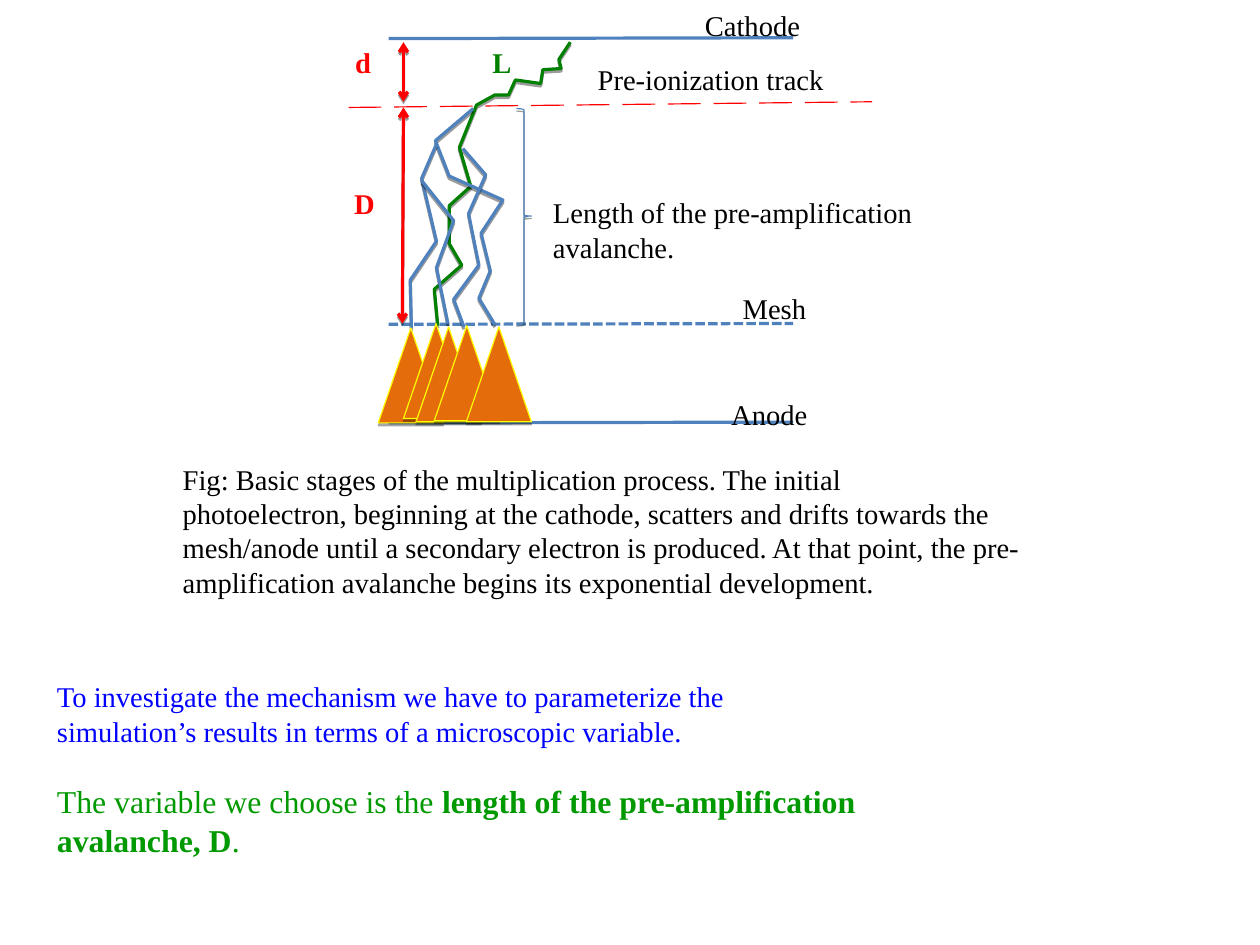
import dataclasses

import lxml.etree
import pptx
import pptx.dml.color
import pptx.enum.dml
import pptx.enum.shapes
import pptx.oxml.ns
import pptx.util

Pt = pptx.util.Pt
qn = pptx.oxml.ns.qn
Kind = pptx.enum.shapes.MSO_SHAPE
Join = pptx.enum.shapes.MSO_CONNECTOR
Dash = pptx.enum.dml.MSO_LINE


@dataclasses.dataclass(frozen=True)
class Theme:
    font: str = "Times New Roman"
    ink: str = "000000"
    blue: str = "4F81BD"
    green: str = "008000"
    red: str = "FF0000"
    cone: str = "E46C0A"
    rim: str = "FFFF00"
    aim: str = "0000FF"
    choice: str = "009900"
    text: float = 18
    large: float = 20
    thin: float = 0.75
    thick: float = 2


theme = Theme()
hue = pptx.dml.color.RGBColor.from_string


def trace(shape, color, width, drop=0, alpha=38):
    shape.line.color.rgb = hue(color)
    shape.line.width = Pt(width)
    props = shape._element.spPr
    effect = lxml.etree.SubElement(props, qn("a:effectLst"))
    if drop:
        shade = lxml.etree.SubElement(effect, qn("a:outerShdw"), blurRad="0",
                                      dist=str(Pt(drop)), dir="5400000", rotWithShape="0")
        tone = lxml.etree.SubElement(shade, qn("a:srgbClr"), val=theme.ink)
        lxml.etree.SubElement(tone, qn("a:alpha"), val=str(alpha * 1000))
    return props.find(qn("a:ln"))


def write(left, top, width, height, paras):
    box = shapes.add_textbox(Pt(left), Pt(top), Pt(width), Pt(height))
    frame = box.text_frame
    frame.word_wrap = True
    for index, runs in enumerate(paras):
        para = frame.add_paragraph() if index else frame.paragraphs[0]
        for words, color, size, bold in runs:
            run = para.add_run()
            run.text = words
            run.font.name = theme.font
            run.font.size = Pt(size)
            run.font.bold = bold
            run.font.color.rgb = hue(color)
    return frame


deck = pptx.Presentation()
deck.slide_width = Pt(793.75)
deck.slide_height = Pt(595.25)
shapes = deck.slides.add_slide(deck.slide_layouts[6]).shapes

for top in (24.3, 204.3, 266.4):
    plate = shapes.add_connector(Join.STRAIGHT, Pt(244.8), Pt(top), Pt(499.7), Pt(top - 0.5))
    trace(plate, theme.blue, theme.thick)
    if top == 204.3:
        plate.line.dash_style = Dash.SQUARE_DOT

level = shapes.add_connector(Join.STRAIGHT, Pt(219.6), Pt(67.7), Pt(549.4), Pt(64.1))
stroke = trace(level, theme.red, theme.thin)
dashes = lxml.etree.SubElement(stroke, qn("a:custDash"))
lxml.etree.SubElement(dashes, qn("a:ds"), d="2800000", sp="1100000")

tracks = [
    (theme.green, [(359.3, 26.6), (352.1, 37.4), (353.5, 43.2), (342, 43.9), (340.6, 52.6),
                   (324.7, 50.4), (320.4, 59.8), (311.8, 59.8), (300.2, 66.2), (298.1, 71.3),
                   (289.4, 92.9), (296.6, 117.4), (283, 129.6), (283, 153.4), (290.9, 167),
                   (273.6, 182.2), (275.8, 205.2)]),
    (theme.blue, [(298.1, 68.4), (274.3, 88.6), (283, 110.9), (316.8, 126), (303.1, 146.9),
                  (308.9, 170.6), (301.7, 187.9), (311.8, 204.5)]),
    (theme.blue, [(291.6, 93.6), (306, 110.2), (295.2, 134.6), (301.7, 167), (285.8, 188.6),
                  (292.3, 205.9)]),
    (theme.blue, [(275, 90.7), (265.7, 112.3), (275, 151.9), (258.5, 176.4), (259.2, 206.6)]),
    (theme.blue, [(265.7, 113.8), (285.8, 139), (275, 168.5), (282.2, 203.8)]),
]
for color, points in tracks:
    spots = [(Pt(x), Pt(y)) for x, y in points]
    pen = shapes.build_freeform(*spots[0])
    pen.add_line_segments(spots[1:], close=False)
    track = pen.convert_to_shape()
    track.fill.background()
    trace(track, color, theme.thick, 1.6)

for left, top in [(238.3, 206.6), (254.2, 203.8), (262.1, 205.9), (273.6, 205.2), (293.8, 205.9)]:
    cone = shapes.add_shape(Kind.ISOSCELES_TRIANGLE, Pt(left), Pt(top), Pt(41), Pt(59.8))
    cone.fill.solid()
    cone.fill.fore_color.rgb = hue(theme.cone)
    trace(cone, theme.rim, theme.thin, 1.8, 35)

for top, foot, end in [(26.6, 254.2, 64.1), (67.7, 253.5, 203.8)]:
    arrow = shapes.add_connector(Join.STRAIGHT, Pt(254.2), Pt(top), Pt(foot), Pt(end))
    stroke = trace(arrow, theme.red, theme.thick, 1.6)
    for tip in ("a:headEnd", "a:tailEnd"):
        lxml.etree.SubElement(stroke, qn(tip), type="arrow")

brace = shapes.add_shape(Kind.RIGHT_BRACE, Pt(325.4), Pt(68.4), Pt(9.4), Pt(135.4))
brace.fill.background()
trace(brace, theme.blue, theme.thin, 1.6)

labels = [
    (369.4, 35.3, 219.6, "Pre-ionization track", theme.ink, False),
    (303.1, 24.5, 22.3, "L", theme.green, True),
    (216, 113.8, 22.3, "D", theme.red, True),
    (216.7, 24.5, 22.3, "d", theme.red, True),
    (341.3, 119.5, 256.3, "Length of the pre-amplification avalanche.", theme.ink, False),
    (437, 1.4, 151.2, "Cathode", theme.ink, False),
    (460.8, 179.6, 108, "Mesh", theme.ink, False),
    (453.6, 246.2, 108, "Anode", theme.ink, False),
]
for left, top, width, words, color, bold in labels:
    write(left, top, width, 28.8, [[(words, color, theme.text, bold)]])

legend = [
    "Fig: Basic stages of the multiplication process. The initial",
    "photoelectron, beginning at the cathode, scatters and drifts towards the",
    "mesh/anode until a secondary electron is produced. At that point, the pre-",
    "amplification avalanche begins its exponential development.",
]
write(108, 287.3, 543.6, 87.1, [[(words, theme.ink, theme.text, False)] for words in legend])

goal = write(28.8, 424.4, 525.6, 126.7, [
    [("To investigate the mechanism we have to parameterize the simulation’s results "
      "in terms of a microscopic variable.", theme.aim, theme.text, False)],
    [("The variable we choose is the ", theme.choice, theme.large, False),
     ("length of the pre-amplification avalanche, D", theme.choice, theme.large, True),
     (".", theme.choice, theme.large, False)],
])
goal.paragraphs[1].space_before = Pt(21.6)

deck.save("out.pptx")
